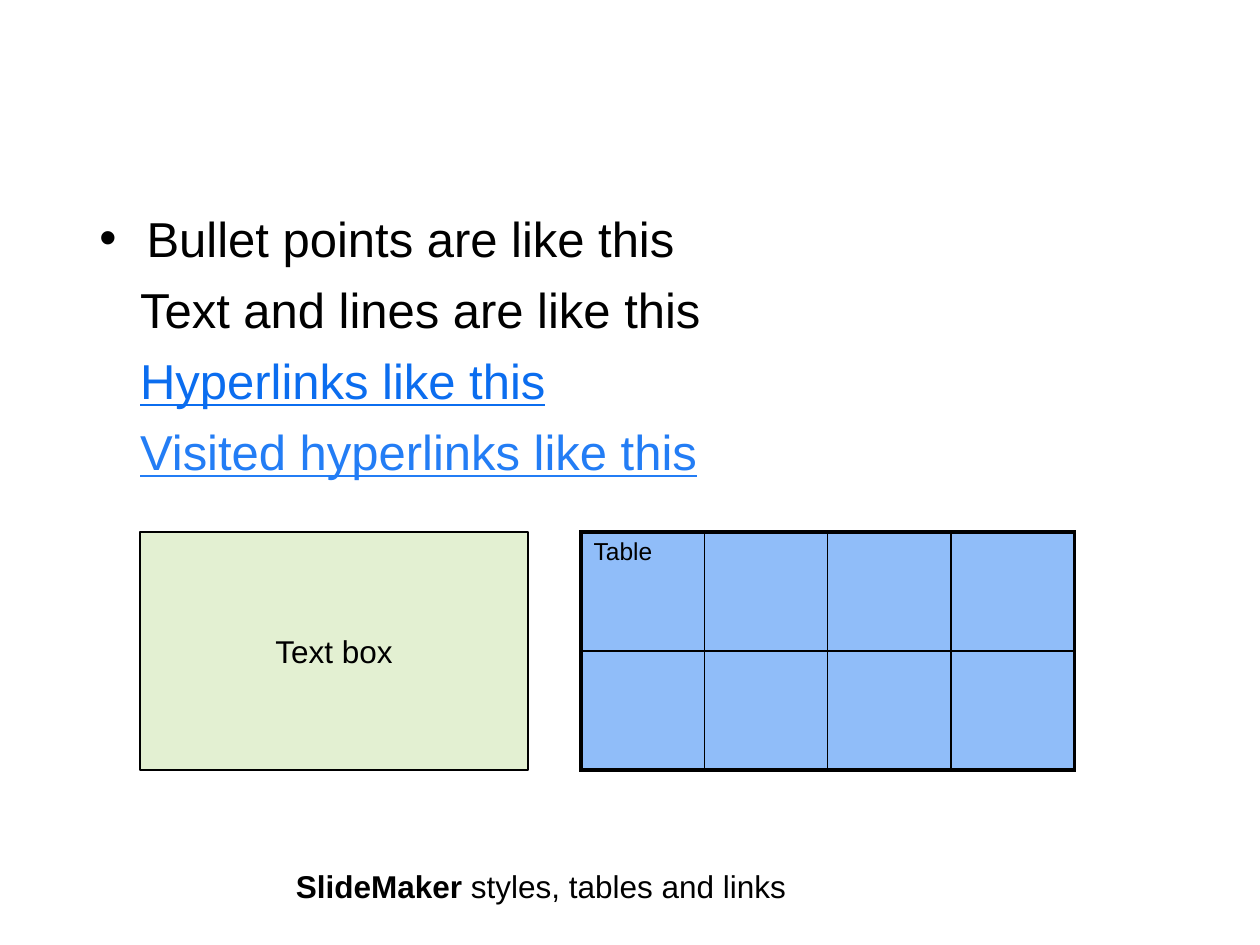
import lxml.etree
import pptx
import pptx.dml.color
import pptx.enum.shapes
import pptx.enum.text
import pptx.oxml.ns
import pptx.util

Pt = pptx.util.Pt
Color = pptx.dml.color.RGBColor.from_string
name_of = pptx.oxml.ns.qn

theme = {
    "font": "Arial",
    "ink": "000000",
    "link": "0B6DEF",
    "visited": "237DF5",
    "cell": "237DF5",
    "panel": "B8D98A",
    "body_size": 28,
    "label_size": 18,
    "cell_size": 14,
}


def write_text(para, text, size, color=theme["ink"], bold=False, underline=False):
    span = para.add_run()
    span.text = text
    span.font.name = theme["font"]
    span.font.size = Pt(size)
    span.font.bold = bold
    span.font.underline = underline
    span.font.color.rgb = Color(color)


def fill_with(fill, parent, color, percent):
    fill.solid()
    fill.fore_color.rgb = Color(color)
    shade = parent.find(name_of("a:solidFill")).find(name_of("a:srgbClr"))
    lxml.etree.SubElement(shade, name_of("a:alpha"), val=str(percent * 1000))


deck = pptx.Presentation()
deck.slide_width = Pt(720)
deck.slide_height = Pt(540)
page = deck.slides.add_slide(deck.slide_layouts[6])

body = page.shapes.add_textbox(Pt(49.7), Pt(113), Pt(390.2), Pt(291.6))
frame = body.text_frame
frame.word_wrap = True
frame.margin_top = Pt(6.2)
lines = [
    ("Bullet points are like this", theme["ink"], False),
    ("Text and lines are like this", theme["ink"], False),
    ("Hyperlinks like this", theme["link"], True),
    ("Visited hyperlinks like this", theme["visited"], True),
]
for index, (text, color, underline) in enumerate(lines):
    para = frame.add_paragraph() if index else frame.paragraphs[0]
    properties = para._p.get_or_add_pPr()
    if index:
        properties.set("marL", str(Pt(23.3)))
        properties.set("indent", "0")
        para.space_before = Pt(7)
    else:
        properties.set("marL", str(Pt(27)))
        properties.set("indent", str(-Pt(27)))
        lxml.etree.SubElement(properties, name_of("a:buFont"), typeface=theme["font"])
        lxml.etree.SubElement(properties, name_of("a:buChar"), char="•")
    write_text(para, text, theme["body_size"], color=color, underline=underline)

row_count, column_count = 2, 4
holder = page.shapes.add_table(
    row_count, column_count, Pt(332), Pt(304), Pt(282), Pt(136)
)
table = holder.table
table.first_row = False
table.horz_banding = False
for column in table.columns:
    column.width = Pt(70.5)
for row in table.rows:
    row.height = Pt(68)
for row in range(row_count):
    for column in range(column_count):
        cell = table.cell(row, column)
        properties = cell._tc.get_or_add_tcPr()
        outer_edges = {
            "a:lnL": column == 0,
            "a:lnR": column == column_count - 1,
            "a:lnT": row == 0,
            "a:lnB": row == row_count - 1,
        }
        for edge, outer in outer_edges.items():
            border = lxml.etree.SubElement(
                properties, name_of(edge), w=str(Pt(2.25 if outer else 1))
            )
            paint = lxml.etree.SubElement(border, name_of("a:solidFill"))
            lxml.etree.SubElement(paint, name_of("a:srgbClr"), val=theme["ink"])
        fill_with(cell.fill, properties, theme["cell"], 50)
write_text(table.cell(0, 0).text_frame.paragraphs[0], "Table", theme["cell_size"])

panel = page.shapes.add_shape(
    pptx.enum.shapes.MSO_SHAPE.RECTANGLE, Pt(80), Pt(304), Pt(221.8), Pt(136)
)
panel.shadow.inherit = False
fill_with(panel.fill, panel._element.spPr, theme["panel"], 38)
panel.line.color.rgb = Color(theme["ink"])
panel.line.width = Pt(0.75)
panel.text_frame.word_wrap = False
panel.text_frame.vertical_anchor = pptx.enum.text.MSO_ANCHOR.MIDDLE
para = panel.text_frame.paragraphs[0]
para.alignment = pptx.enum.text.PP_ALIGN.CENTER
write_text(para, "Text box", theme["label_size"])

caption = page.shapes.add_textbox(Pt(162), Pt(492), Pt(298.8), Pt(28.8))
caption.text_frame.word_wrap = False
para = caption.text_frame.paragraphs[0]
write_text(para, "SlideMaker", theme["label_size"], bold=True)
write_text(para, " styles, tables and links", theme["label_size"])

deck.save("out.pptx")
